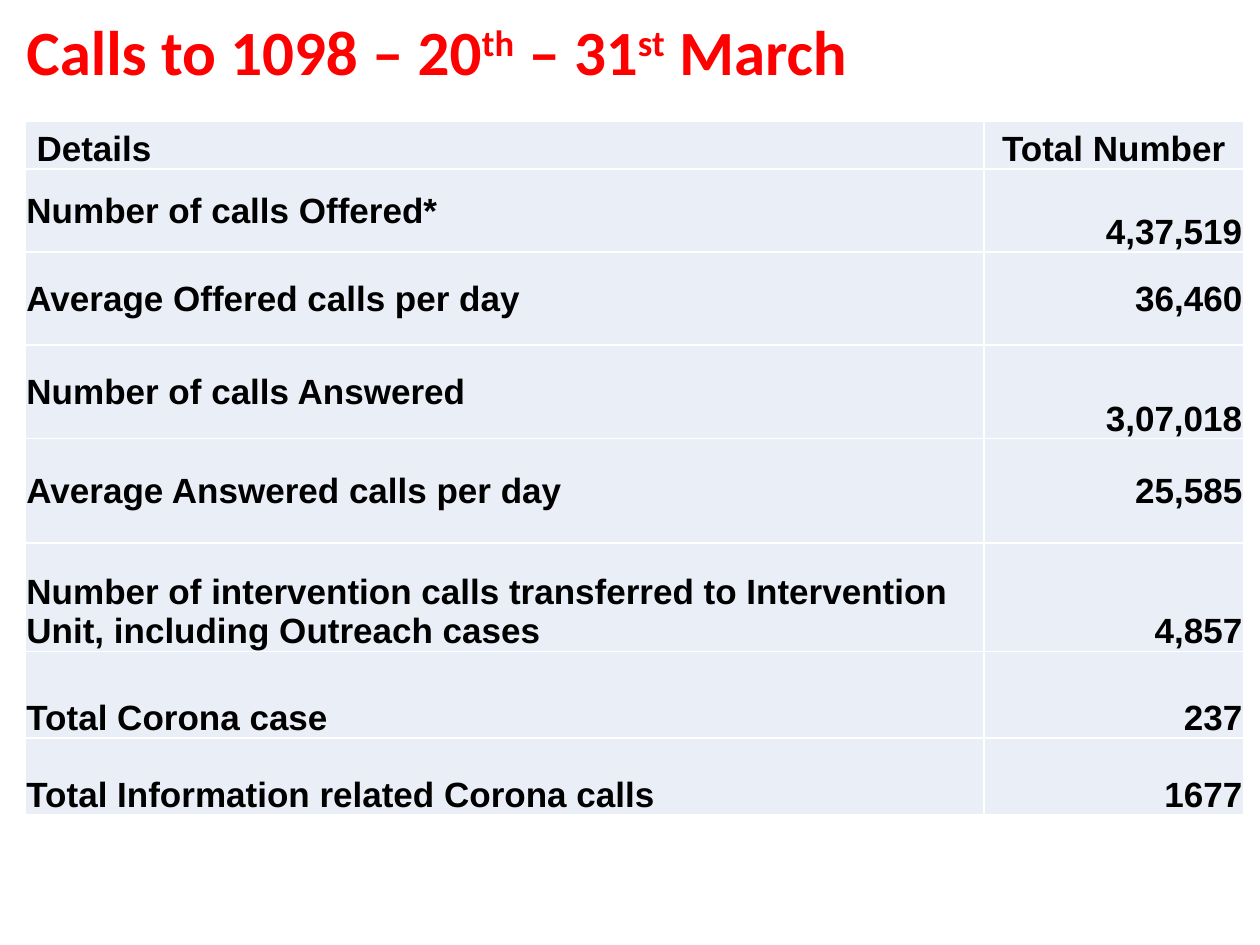
import pptx
import pptx.util
import pptx.dml.color
import pptx.enum.text
import pptx.oxml.ns
from lxml import etree

Inches = pptx.util.Inches
Pt = pptx.util.Pt
RGBColor = pptx.dml.color.RGBColor
Align = pptx.enum.text.PP_ALIGN
Anchor = pptx.enum.text.MSO_ANCHOR

RED = RGBColor(0xFF, 0x00, 0x00)
BLACK = RGBColor(0x00, 0x00, 0x00)
WHITE = RGBColor(0xFF, 0xFF, 0xFF)
PALE_BLUE = RGBColor(0xEA, 0xEF, 0xF7)

TITLE_FONT = {"name": "Calibri", "size": Pt(36), "bold": True}
CELL_FONT = {"name": "Arial", "size": Pt(20), "bold": True}
CELL_MARGINS = {
    "margin_left": Inches(0.01),
    "margin_right": Inches(0.01),
    "margin_top": Inches(0.01),
    "margin_bottom": 0,
}
TITLE_PARTS = [
    ("Calls to 1098 – 20", False),
    ("th", True),
    (" – 31", False),
    ("st", True),
    (" March", False),
]
COLUMN_WIDTHS = [7.61, 2.06]
CALL_ROWS = [
    (0.38, "Details", Anchor.BOTTOM, "Total Number", Anchor.BOTTOM),
    (0.66, "Number of calls Offered*", Anchor.MIDDLE, "4,37,519", Anchor.BOTTOM),
    (0.74, "Average Offered calls per day", Anchor.MIDDLE, "36,460", Anchor.MIDDLE),
    (0.74, "Number of calls Answered", Anchor.MIDDLE, "3,07,018", Anchor.BOTTOM),
    (0.83, "Average Answered calls per day", Anchor.MIDDLE, "25,585", Anchor.MIDDLE),
    (0.86, "Number of intervention calls transferred to Intervention Unit, "
     "including Outreach cases", Anchor.BOTTOM, "4,857", Anchor.BOTTOM),
    (0.69, "Total Corona case", Anchor.BOTTOM, "237", Anchor.BOTTOM),
    (0.61, "Total Information related Corona calls", Anchor.BOTTOM, "1677", Anchor.BOTTOM),
]


def apply_format(target, values):
    """Set each named attribute on the target."""
    for attribute, value in values.items():
        setattr(target, attribute, value)


def add_title(slide):
    """Place the heading with its raised ordinal endings."""
    heading = slide.shapes.title
    apply_format(heading, {"left": Inches(0.11), "top": 0,
                           "width": Inches(8.5), "height": Inches(0.76)})
    apply_format(heading.text_frame, {"vertical_anchor": Anchor.BOTTOM, "word_wrap": True})
    line = heading.text_frame.paragraphs[0]
    apply_format(line, {"alignment": Align.LEFT, "line_spacing": 0.9})
    for words, raised in TITLE_PARTS:
        part = line.add_run()
        part.text = words
        apply_format(part.font, TITLE_FONT)
        part.font.color.rgb = RED
        if raised:
            part.font._element.set("baseline", "30000")


def add_borders(cell):
    """Draw a thin white line on every side of the cell."""
    qn = pptx.oxml.ns.qn
    properties = cell._tc.get_or_add_tcPr()
    for side in ("a:lnL", "a:lnR", "a:lnT", "a:lnB"):
        border = etree.SubElement(properties, qn(side), w=str(Pt(1)))
        paint = etree.SubElement(border, qn("a:solidFill"))
        etree.SubElement(paint, qn("a:srgbClr"), val=str(WHITE))


def fill_cell(cell, words, anchor, alignment):
    """Write and format one table cell."""
    apply_format(cell, {**CELL_MARGINS, "text": words, "vertical_anchor": anchor})
    add_borders(cell)
    cell.fill.solid()
    cell.fill.fore_color.rgb = PALE_BLUE
    line = cell.text_frame.paragraphs[0]
    line.alignment = alignment
    font = line.runs[0].font
    apply_format(font, CELL_FONT)
    font.color.rgb = BLACK


def add_calls_table(slide):
    """Build the table of call counts."""
    height = sum(row[0] for row in CALL_ROWS)
    calls = slide.shapes.add_table(
        len(CALL_ROWS), len(COLUMN_WIDTHS), Inches(0.2), Inches(0.96),
        Inches(sum(COLUMN_WIDTHS)), Inches(height)).table
    apply_format(calls, {"first_row": False, "horz_banding": False})
    for column, width in zip(calls.columns, COLUMN_WIDTHS):
        column.width = Inches(width)
    for index, (row_height, detail, detail_anchor, total, total_anchor) in enumerate(CALL_ROWS):
        calls.rows[index].height = Inches(row_height)
        fill_cell(calls.cell(index, 0), detail, detail_anchor, Align.LEFT)
        fill_cell(calls.cell(index, 1), total, total_anchor,
                  Align.RIGHT if index else Align.CENTER)
    calls.cell(0, 0).margin_left = Inches(0.09)


def main():
    """Build and save the slide."""
    deck = pptx.Presentation()
    apply_format(deck, {"slide_width": Inches(10), "slide_height": Inches(7.5)})
    slide = deck.slides.add_slide(deck.slide_layouts[5])
    add_title(slide)
    add_calls_table(slide)
    deck.save("out.pptx")


if __name__ == "__main__":
    main()
